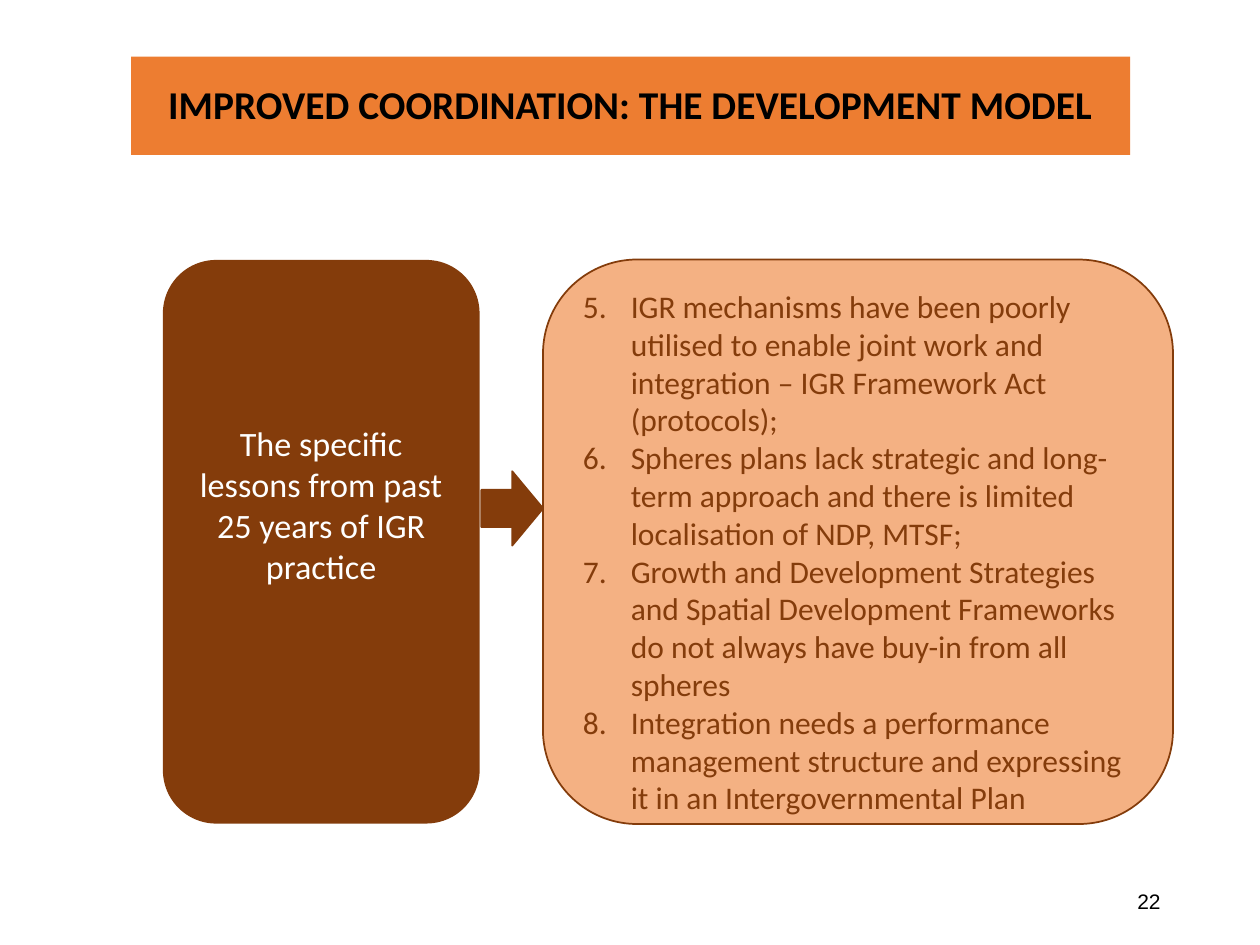
from lxml.etree import SubElement
from pptx import Presentation
from pptx.dml.color import RGBColor
from pptx.enum.shapes import MSO_SHAPE
from pptx.enum.text import MSO_ANCHOR, PP_ALIGN
from pptx.oxml.ns import qn
from pptx.util import Inches, Pt

COLORS = {
    "title_bar": "ED7D31",
    "brown": "843C0B",
    "peach": "F4B183",
    "white": "FFFFFF",
    "black": "000000",
}
FIRST_LESSON = 5
LESSONS = [
    "IGR mechanisms have been poorly utilised to enable joint work and "
    "integration – IGR Framework Act (protocols);",
    "Spheres plans lack strategic and long-term approach and there is limited "
    "localisation of NDP, MTSF;",
    "Growth and Development Strategies and Spatial Development Frameworks "
    "do not always have buy-in from all spheres",
    "Integration needs a performance management structure and expressing "
    "it in an Intergovernmental Plan",
]


def color(name):
    return RGBColor.from_string(COLORS[name])


def add_box(slide, preset, bounds, fill, line=None):
    shape = slide.shapes.add_shape(preset, *map(Inches, bounds))
    shape.shadow.inherit = False
    shape.fill.solid()
    shape.fill.fore_color.rgb = color(fill)
    if line:
        shape.line.color.rgb = color(line)
        shape.line.width = Pt(1)
    else:
        shape.line.fill.background()
    return shape


def set_text(shape, texts, size, text_color, align, font="Calibri", bold=False,
             anchor=MSO_ANCHOR.MIDDLE, top=0.05, bottom=0.05):
    """Write one paragraph per text; top and bottom are insets in inches."""
    frame = shape.text_frame
    frame.word_wrap = True
    frame.vertical_anchor = anchor
    frame.margin_top, frame.margin_bottom = Inches(top), Inches(bottom)
    for index, text in enumerate(texts):
        paragraph = frame.add_paragraph() if index else frame.paragraphs[0]
        paragraph.alignment = align
        run = paragraph.add_run()
        run.text = text
        run.font.name = font
        run.font.size = Pt(size)
        run.font.bold = bold
        run.font.color.rgb = color(text_color)


def number_paragraphs(shape, start, indent):
    for paragraph in shape.text_frame.paragraphs:
        properties = paragraph._p.get_or_add_pPr()
        properties.set("marL", str(Inches(indent)))
        properties.set("indent", str(-Inches(indent)))
        SubElement(properties, qn("a:buFont"), typeface="+mj-lt")
        SubElement(properties, qn("a:buAutoNum"), type="arabicPeriod", startAt=str(start))


def add_page_number(slide, number):
    box = slide.shapes.add_textbox(*map(Inches, (7.06, 6.95, 2.25, 0.4)))
    set_text(box, [number], 12, "black", PP_ALIGN.RIGHT, font="Arial")


def main():
    presentation = Presentation()
    presentation.slide_width, presentation.slide_height = Inches(10), Inches(7.5)
    slide = presentation.slides.add_slide(presentation.slide_layouts[6])

    add_page_number(slide, "22")

    lessons = add_box(slide, MSO_SHAPE.ROUNDED_RECTANGLE, (4.31, 2.06, 5, 4.48), "peach", "brown")
    set_text(lessons, LESSONS, 18, "brown", PP_ALIGN.LEFT,
             anchor=MSO_ANCHOR.TOP, top=0, bottom=0)
    number_paragraphs(lessons, FIRST_LESSON, 0.38)

    topic = add_box(slide, MSO_SHAPE.ROUNDED_RECTANGLE, (1.3, 2.07, 2.5, 4.46), "brown", "brown")
    set_text(topic, ["The specific lessons from past 25 years of IGR practice"],
             19.5, "white", PP_ALIGN.CENTER, bottom=0.65)

    add_box(slide, MSO_SHAPE.RIGHT_ARROW, (3.82, 3.74, 0.49, 0.59), "brown", "brown")

    title = add_box(slide, MSO_SHAPE.RECTANGLE, (1.04, 0.45, 7.93, 0.78), "title_bar")
    set_text(title, ["IMPROVED COORDINATION: THE DEVELOPMENT MODEL"],
             22.5, "black", PP_ALIGN.CENTER, bold=True, bottom=0.09)

    presentation.save("out.pptx")


if __name__ == "__main__":
    main()
